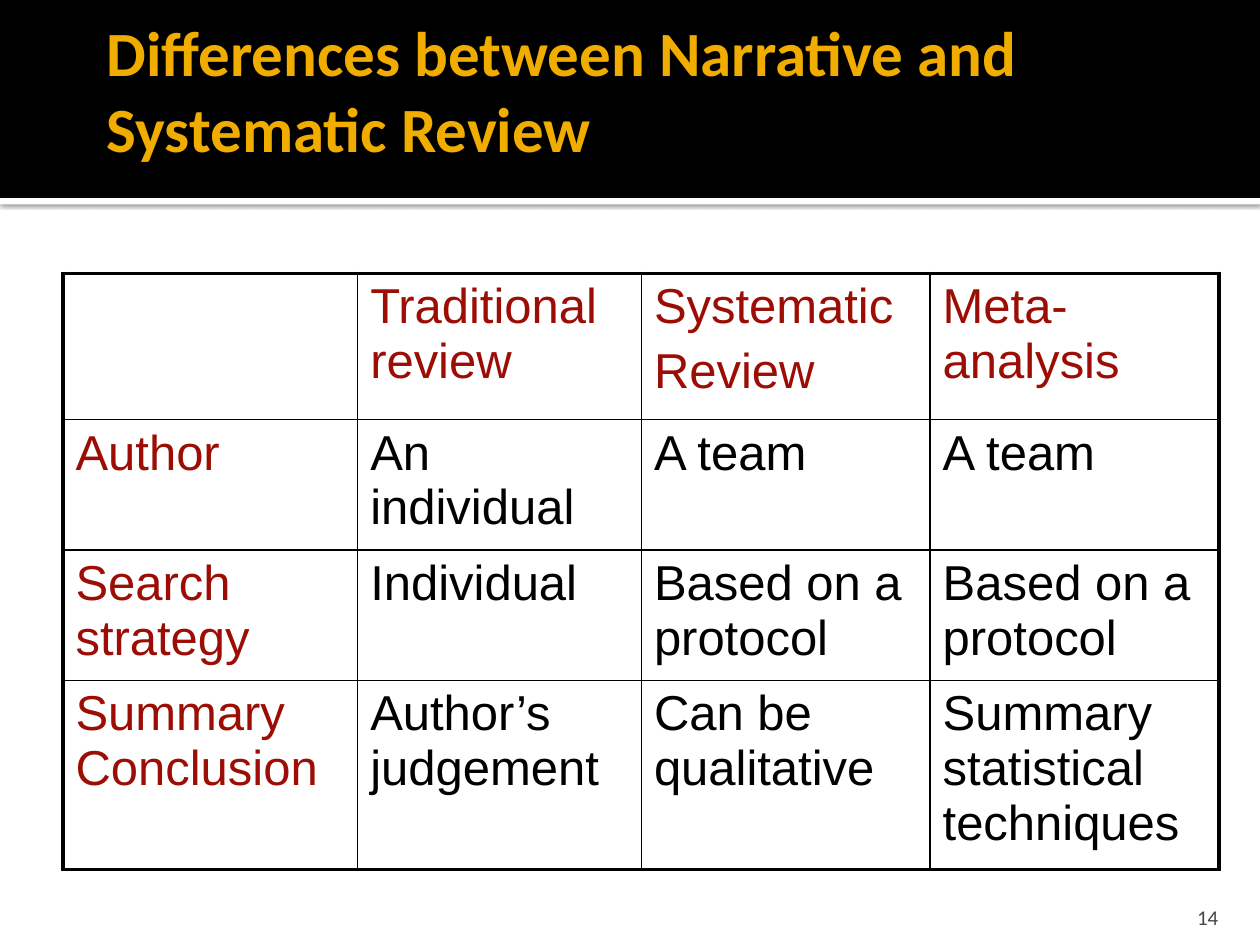
from dataclasses import dataclass

from lxml import etree
from pptx import Presentation
from pptx import util as u
from pptx.dml.color import RGBColor
from pptx.enum import shapes, text
from pptx.oxml import parse_xml
from pptx.oxml.ns import nsdecls, qn


@dataclass(frozen=True)
class Theme:
    black: str = "000000"
    white: str = "FFFFFF"
    gold: str = "F0AD00"
    red: str = "9C0E05"
    grey: str = "454545"
    heading_font: str = "Calibri"
    table_font: str = "Arial"
    title_size: float = 36
    table_size: float = 28
    number_size: float = 12
    paragraph_gap: float = 5.6
    outer_line: float = 2.25
    inner_line: float = 1


class SlideBuilder:
    def __init__(self, page, theme):
        self.page = page
        self.theme = theme

    def add_span(self, para, words, font, size, color, bold=False):
        span = para.add_run()
        span.text = words
        span.font.name = font
        span.font.size = u.Pt(size)
        span.font.bold = bold
        span.font.color.rgb = RGBColor.from_string(color)

    def add_band(self, top, height, color, shadow=False):
        band = self.page.shapes.add_shape(
            shapes.MSO_SHAPE.RECTANGLE, 0, u.Cm(top), u.Cm(25.4), u.Cm(height))
        band.shadow.inherit = False
        band.fill.solid()
        band.fill.fore_color.rgb = RGBColor.from_string(color)
        band.line.fill.background()
        if shadow:
            effects = band._element.spPr.find(qn("a:effectLst"))
            effects.append(parse_xml(
                f'<a:outerShdw {nsdecls("a")} blurRad="{u.Pt(2.5)}" dist="{u.Pt(0.8)}" '
                f'dir="5400000" algn="tl" rotWithShape="0"><a:srgbClr val="{self.theme.black}">'
                '<a:alpha val="60000"/></a:srgbClr></a:outerShdw>'))

    def add_text(self, place, words, size, color, anchor, align, insets, bold=False):
        box = self.page.shapes.add_textbox(*(u.Cm(length) for length in place))
        frame = box.text_frame
        frame.word_wrap = True
        frame.vertical_anchor = anchor
        (frame.margin_left, frame.margin_top,
         frame.margin_right, frame.margin_bottom) = (u.Cm(inset) for inset in insets)
        para = frame.paragraphs[0]
        para.alignment = align
        self.add_span(para, words, self.theme.heading_font, size, color, bold)

    def add_border(self, cell, side, width):
        properties = cell._tc.get_or_add_tcPr()
        line = etree.SubElement(properties, qn(f"a:ln{side}"), w=str(u.Pt(width)))
        fill = etree.SubElement(line, qn("a:solidFill"))
        etree.SubElement(fill, qn("a:srgbClr"), val=self.theme.black)

    def add_table(self, left, top, widths, heights, rows):
        theme = self.theme
        table = self.page.shapes.add_table(
            len(heights), len(widths), u.Cm(left), u.Cm(top),
            u.Cm(sum(widths)), u.Cm(sum(heights))).table
        table.first_row = table.horz_banding = False
        for column, width in zip(table.columns, widths):
            column.width = u.Cm(width)
        for row, height in zip(table.rows, heights):
            row.height = u.Cm(height)

        last_row, last_column = len(heights) - 1, len(widths) - 1
        for r, row in enumerate(rows):
            for c, words in enumerate(row):
                cell = table.cell(r, c)
                # Heavy frame outside, thin grid inside
                edges = {"L": c == 0, "R": c == last_column,
                         "T": r == 0, "B": r == last_row}
                for side, outer in edges.items():
                    self.add_border(cell, side, theme.outer_line if outer else theme.inner_line)
                cell.fill.background()
                # Headings in red, content in black
                color = theme.red if r == 0 or c == 0 else theme.black
                for index, line in enumerate(words.splitlines()):
                    frame = cell.text_frame
                    para = frame.add_paragraph() if index else frame.paragraphs[0]
                    if index:
                        para.space_before = u.Pt(theme.paragraph_gap)
                    self.add_span(para, line, theme.table_font, theme.table_size, color)


def main():
    theme = Theme()
    deck = Presentation()
    deck.slide_width, deck.slide_height = u.Cm(25.4), u.Cm(19.05)
    builder = SlideBuilder(deck.slides.add_slide(deck.slide_layouts[6]), theme)

    # Header
    builder.add_band(3.99, 0.13, theme.white, shadow=True)
    builder.add_band(0, 3.99, theme.black)
    builder.add_text(
        (1.9, 0.43, 21.59, 2.74), "Differences between Narrative and Systematic Review",
        theme.title_size, theme.gold, text.MSO_ANCHOR.MIDDLE, text.PP_ALIGN.LEFT,
        (0.25, 0.13, 0.13, 0.13), bold=True)

    # Comparison table
    builder.add_table(
        1.27, 5.51, (5.94, 5.72, 5.82, 5.82), (2.95, 2.46, 2.46, 3.56),
        (("", "Traditional review", "Systematic\nReview", "Meta-analysis"),
         ("Author", "An individual", "A team", "A team"),
         ("Search strategy", "Individual", "Based on a protocol", "Based on a protocol"),
         ("Summary Conclusion", "Author’s judgement", "Can be qualitative",
          "Summary statistical techniques")))

    # Slide number
    builder.add_text(
        (22.78, 17.98, 2.03, 0.76), "14", theme.number_size, theme.grey,
        text.MSO_ANCHOR.BOTTOM, text.PP_ALIGN.RIGHT, (0.25, 0.13, 0.25, 0))

    deck.save("out.pptx")


if __name__ == "__main__":
    main()
